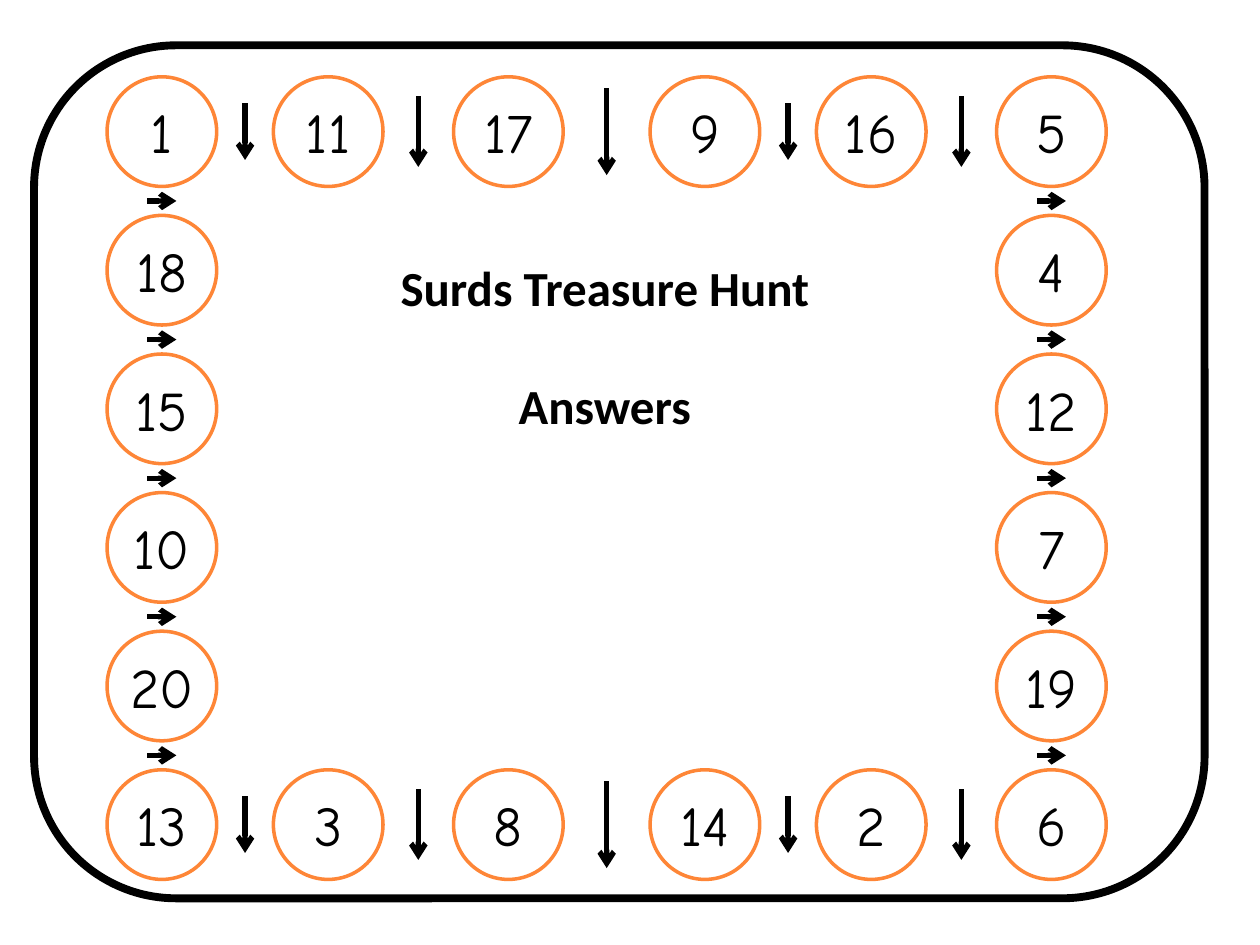
from pptx import Presentation
from pptx.dml.color import RGBColor
from pptx.enum.shapes import MSO_CONNECTOR as Connector, MSO_SHAPE as Shape
from pptx.enum.text import MSO_ANCHOR as Anchor, MSO_AUTO_SIZE as AutoSize, PP_ALIGN as Align
from pptx.oxml.ns import qn
from pptx.util import Inches, Pt
from lxml.etree import SubElement

BLACK = RGBColor(0x00, 0x00, 0x00)
WHITE = RGBColor(0xFF, 0xFF, 0xFF)
ORANGE = RGBColor(0xFE, 0x86, 0x37)

# Boxes are left, top, width, height in inches
SLIDE_WIDTH, SLIDE_HEIGHT = 10, 7.5
FRAME_BOX = (0.27, 0.36, 9.29, 6.77)
RING_BOX = (0.85, 0.61, 7.93, 6.37)
TITLE_BOX = (2.87, 1.99, 3.86, 1.51)

DIAMETER = 0.87
COLUMN_STEPS = (0, 1.32, 2.75, 4.31, 5.63, 7.06)  # circle offsets across the ring
TOP_ROW = (1, 11, 17, 9, 16, 5)
BOTTOM_ROW = (13, 3, 8, 14, 2, 6)
LEFT_COLUMN = (18, 15, 10, 20)
RIGHT_COLUMN = (4, 12, 7, 19)


def add_run(paragraph, text, font_name, size, bold=False):
    paragraph.alignment = Align.CENTER
    run = paragraph.add_run()
    run.text = text
    run.font.name, run.font.size, run.font.bold = font_name, Pt(size), bold
    run.font.color.rgb = BLACK


def add_outline(slide, kind, box, color, width):
    shape = slide.shapes.add_shape(kind, *map(Inches, box))
    shape.shadow.inherit = False
    shape.line.color.rgb = color
    shape.line.width = Pt(width)
    return shape


def add_circle(slide, left, top, number):
    circle = add_outline(slide, Shape.OVAL, (left, top, DIAMETER, DIAMETER), ORANGE, 2)
    circle.fill.solid()
    circle.fill.fore_color.rgb = WHITE
    frame = circle.text_frame
    frame.word_wrap = False
    frame.vertical_anchor = Anchor.MIDDLE
    add_run(frame.paragraphs[0], str(number), "Comic Neue", 32)


def add_arrow(slide, x1, y1, x2, y2):
    arrow = slide.shapes.add_connector(Connector.STRAIGHT, *map(Inches, (x1, y1, x2, y2)))
    arrow.line.color.rgb = BLACK
    arrow.line.width = Pt(3)
    SubElement(arrow.line._get_or_add_ln(), qn("a:tailEnd"), type="arrow")
    SubElement(arrow._element.spPr, qn("a:effectLst"))


def add_frame(slide, box):
    frame = add_outline(slide, Shape.ROUNDED_RECTANGLE, box, BLACK, 4.5)
    frame.fill.background()


def add_ring(slide, box):
    left, top, width, height = box
    columns = [left + step for step in COLUMN_STEPS]
    right, bottom = left + width - DIAMETER, top + height - DIAMETER
    pitch = (bottom - top) / (len(LEFT_COLUMN) + 1)

    # Numbered circles: two full rows, then the sides between them
    for y, numbers in ((top, TOP_ROW), (bottom, BOTTOM_ROW)):
        for x, number in zip(columns, numbers):
            add_circle(slide, x, y, number)
    for x, numbers in ((left, LEFT_COLUMN), (right, RIGHT_COLUMN)):
        for row, number in enumerate(numbers, 1):
            add_circle(slide, x, top + row * pitch, number)

    # Every arrow is centred in a gap, at right angles to it and as long as it is wide
    for y in (top + DIAMETER / 2, bottom + DIAMETER / 2):
        for x, next_x in zip(columns, columns[1:]):
            gap = next_x - x - DIAMETER
            middle = next_x - gap / 2
            add_arrow(slide, middle, y - gap / 2, middle, y + gap / 2)
    gap = pitch - DIAMETER
    for x in (left + DIAMETER / 2, right + DIAMETER / 2):
        for row in range(1, len(LEFT_COLUMN) + 2):
            middle = top + row * pitch - gap / 2
            add_arrow(slide, x - gap / 2, middle, x + gap / 2, middle)


def add_title(slide, box):
    title = slide.shapes.title
    title.left, title.top, title.width, title.height = map(Inches, box)
    frame = title.text_frame
    frame.word_wrap = True
    frame.auto_size = AutoSize.NONE
    frame.vertical_anchor = Anchor.TOP
    add_run(frame.paragraphs[0], "Surds Treasure Hunt", "Calibri", 28, bold=True)
    answers = frame.add_paragraph()
    answers.space_before = Pt(34)
    add_run(answers, "Answers", "Calibri", 28, bold=True)


def main():
    presentation = Presentation()
    presentation.slide_width = Inches(SLIDE_WIDTH)
    presentation.slide_height = Inches(SLIDE_HEIGHT)
    slide = presentation.slides.add_slide(presentation.slide_layouts[5])
    add_frame(slide, FRAME_BOX)
    add_ring(slide, RING_BOX)
    add_title(slide, TITLE_BOX)
    presentation.save("out.pptx")


if __name__ == "__main__":
    main()
